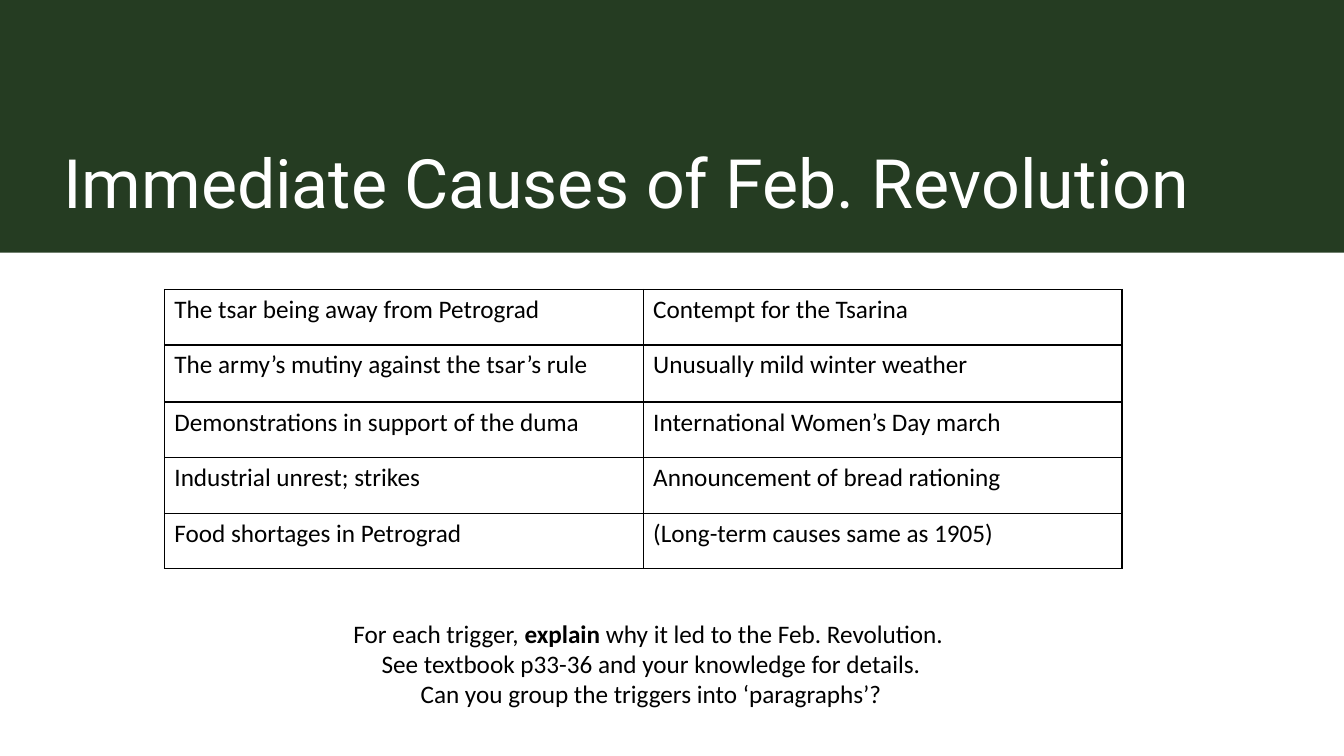
from dataclasses import dataclass

from lxml.etree import SubElement as Sub
from pptx import Presentation
from pptx.dml.color import RGBColor as RGB
from pptx.enum.shapes import MSO_SHAPE as Shape
from pptx.enum.text import MSO_ANCHOR as Anchor, PP_ALIGN as Align
from pptx.oxml.ns import qn
from pptx.util import Pt


@dataclass
class Theme:
    green: RGB = RGB(0x25, 0x3C, 0x22)
    white: RGB = RGB(255, 255, 255)
    black: RGB = RGB(0, 0, 0)
    head: str = "Roboto"
    body: str = "Calibri"
    large: float = 48.6
    small: float = 18


theme = Theme()


def style(para, face, size, color):
    para.font.name = face
    para.font.size = Pt(size)
    para.font.color.rgb = color


def border(cell):
    props = cell._tc.get_or_add_tcPr()
    for at, side in enumerate(("lnL", "lnR", "lnT", "lnB")):
        line = props.makeelement(qn("a:" + side), {"w": str(Pt(1))})
        fill = Sub(line, qn("a:solidFill"))
        Sub(fill, qn("a:srgbClr"), val=str(theme.black))
        props.insert(at, line)


deck = Presentation()
deck.slide_width, deck.slide_height = Pt(960), Pt(540)
slide = deck.slides.add_slide(deck.slide_layouts[6])
shapes = slide.shapes

band = shapes.add_shape(Shape.RECTANGLE, 0, 0, Pt(960), Pt(180.5))
band.shadow.inherit = False
band.fill.solid()
band.fill.fore_color.rgb = theme.green
band.line.fill.background()

title = shapes.add_textbox(Pt(38.2), Pt(28.8), Pt(856), Pt(133.2)).text_frame
title.word_wrap = True
title.vertical_anchor = Anchor.BOTTOM
title.text = "Immediate Causes of Feb. Revolution"
style(title.paragraphs[0], theme.head, theme.large, theme.white)

causes = [
    ("The tsar being away from Petrograd", "Contempt for the Tsarina"),
    ("The army’s mutiny against the tsar’s rule", "Unusually mild winter weather"),
    ("Demonstrations in support of the duma", "International Women’s Day march"),
    ("Industrial unrest; strikes", "Announcement of bread rationing"),
    ("Food shortages in Petrograd", "(Long-term causes same as 1905)"),
]
highs = [39.6, 40.8, 39.8, 39.6, 39.6]
grid = shapes.add_table(len(causes), 2, Pt(117.4), Pt(206.8), Pt(684), Pt(sum(highs))).table
grid.first_row = grid.horz_banding = False
for row, high, pair in zip(grid.rows, highs, causes):
    row.height = Pt(high)
    for cell, cause in zip(row.cells, pair):
        cell.text = cause
        cell.fill.background()
        border(cell)
        style(cell.text_frame.paragraphs[0], theme.body, theme.small, theme.black)

task = shapes.add_textbox(Pt(62.6), Pt(437.8), Pt(805), Pt(72.7)).text_frame
task.word_wrap = True
first = task.paragraphs[0]
for text, bold in (
    ("For each trigger, ", False),
    ("explain", True),
    (" why it led to the Feb. Revolution. ", False),
):
    run = first.add_run()
    run.text = text
    run.font.bold = bold
first.add_line_break()
first.add_run().text = "See textbook p33-36 and your knowledge for details."
task.add_paragraph().text = "Can you group the triggers into ‘paragraphs’?"
for para in task.paragraphs:
    para.alignment = Align.CENTER
    style(para, theme.body, theme.small, theme.black)

deck.save("out.pptx")
